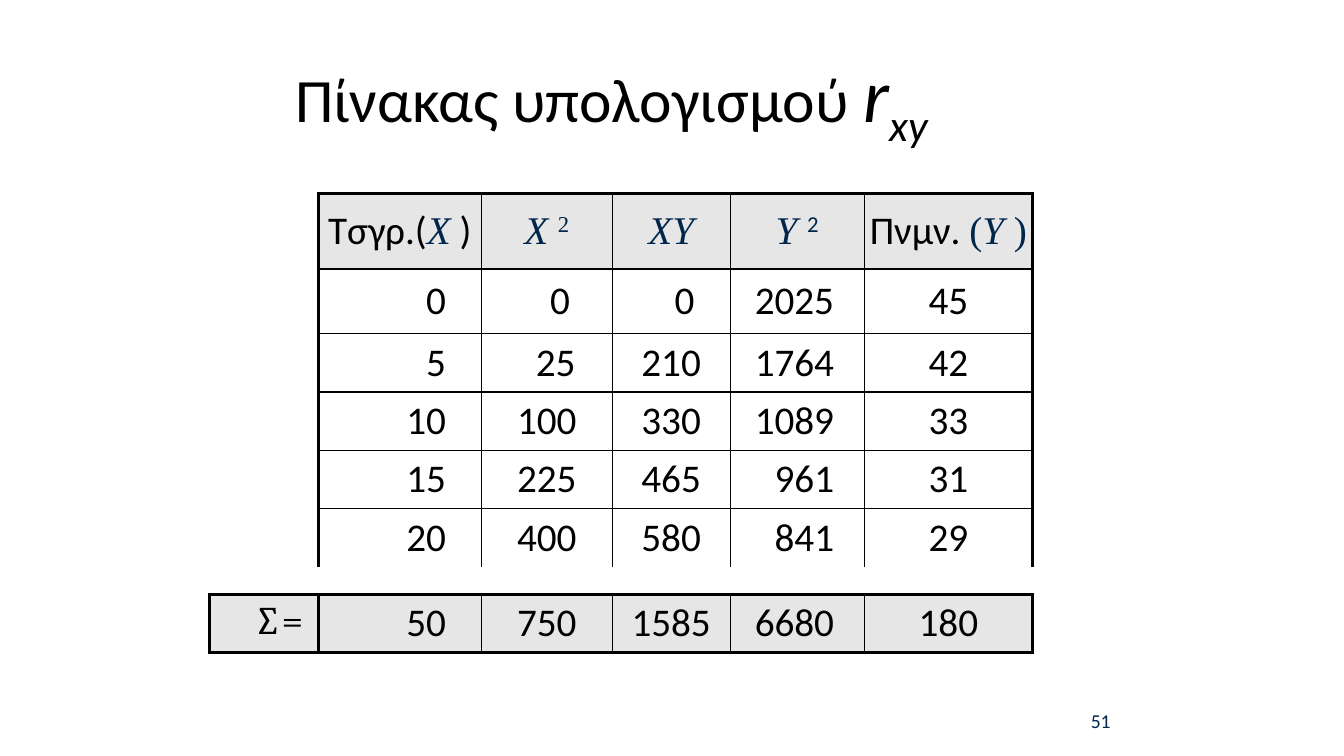
from lxml.etree import SubElement
from pptx import Presentation
from pptx.dml.color import RGBColor
from pptx.enum.text import MSO_ANCHOR as Anchor, MSO_AUTO_SIZE as AutoSize, PP_ALIGN as Align
from pptx.oxml.ns import qn
from pptx.util import Cm, Pt

BLACK, NAVY, GRAY = "000000", "00264C", "E6E6E6"
SERIF = "Times New Roman"
THIN, THICK = 1, 2.25
NO_STYLE = "{2D5ABB26-0587-4C30-8999-92F81FD0307C}"

COLUMN_WIDTHS = [2.74, 4.11, 3.3, 2.97, 3.38, 4.24]
ROW_HEIGHTS = [1.9, 1.63] + [1.47] * 4 + [0.69, 1.47]
SPACER, TOTAL = 6, 7

VARIABLE = {"font": SERIF, "color": NAVY, "italic": True}
SERIF_PLAIN = {"font": SERIF, "color": NAVY}
HEADERS = [
    [("Τσγρ.(", {}), ("X", VARIABLE), (" )", {})],
    [("X ", VARIABLE), ("2", {**SERIF_PLAIN, "baseline": 30})],
    [("XY", VARIABLE)],
    [("Y ", VARIABLE), ("2", {"color": NAVY, "baseline": 30})],
    [("Πνμν. ", {}), ("(", SERIF_PLAIN), ("Y ", VARIABLE), (")", SERIF_PLAIN)],
]
DATA = [
    [0, 0, 0, 2025, 45],
    [5, 25, 210, 1764, 42],
    [10, 100, 330, 1089, 33],
    [15, 225, 465, 961, 31],
    [20, 400, 580, 841, 29],
]
TOTALS = [50, 750, 1585, 6680, 180]
RIGHT_INSETS = {1: 0.89, 4: 0.76}  # right-aligned columns
# Extra left inset that shifts short numbers towards the units column
SHIFTS = {(1, 2): 0.67, (1, 3): 0.67, (2, 2): 0.45}


def rgb(color):
    return RGBColor.from_string(color)


def write_text(para, text, font="Calibri", size=28, color=BLACK, italic=False, baseline=0):
    span = para.add_run()
    span.text = text
    span.font.name = font
    span.font.size = Pt(size)
    span.font.color.rgb = rgb(color)
    span.font.italic = italic
    if baseline:
        span.font._element.set("baseline", str(baseline * 1000))


def place(shape, box):
    shape.left, shape.top, shape.width, shape.height = [Cm(length) for length in box]


def add_title(page, box):
    title = page.shapes.title
    place(title, box)
    frame = title.text_frame
    frame.auto_size = AutoSize.NONE
    frame.vertical_anchor = Anchor.MIDDLE
    para = frame.paragraphs[0]
    para.alignment = Align.LEFT
    para.line_spacing = 0.9
    write_text(para, "Πίνακας υπολογισμού ", size=44)
    write_text(para, "r", size=54, italic=True)
    write_text(para, "xy", size=54, italic=True, baseline=-25)


def add_page_number(page, box):
    frame = page.shapes.add_textbox(*[Cm(length) for length in box]).text_frame
    frame.word_wrap = True
    frame.vertical_anchor = Anchor.MIDDLE
    para = frame.paragraphs[0]
    para.alignment = Align.CENTER
    write_text(para, "51", size=14, color=NAVY)


def vertical_width(row, edge):
    if row == SPACER or (edge == 0 and row != TOTAL):
        return 0
    return THICK if edge in (0, 1, len(COLUMN_WIDTHS)) else THIN


def horizontal_width(edge, column):
    if edge in (TOTAL, TOTAL + 1):
        return THICK
    if column == 0 or edge == SPACER:
        return 0
    return THICK if edge in (0, 1) else THIN


def draw_borders(cell, row, column):
    properties = cell._tc.get_or_add_tcPr()
    widths = {
        "L": vertical_width(row, column),
        "R": vertical_width(row, column + 1),
        "T": horizontal_width(row, column),
        "B": horizontal_width(row + 1, column),
    }
    for side, width in widths.items():
        line = SubElement(properties, qn(f"a:ln{side}"), w=str(Pt(width)))
        if width:
            fill = SubElement(line, qn("a:solidFill"))
            SubElement(fill, qn("a:srgbClr"), val=BLACK)
        else:
            SubElement(line, qn("a:noFill"))


def set_insets(cell, left, top, right, bottom):
    cell.margin_left, cell.margin_top = Cm(left), Cm(top)
    cell.margin_right, cell.margin_bottom = Cm(right), Cm(bottom)


def fill_cell(cell, row, column):
    para = cell.text_frame.paragraphs[0]
    cell.vertical_anchor = Anchor.MIDDLE
    para.alignment = Align.CENTER
    if row == SPACER or (column == 0 and row != TOTAL):
        set_insets(cell, 0, 0, 0, 0)
        SubElement(para._p, qn("a:endParaRPr"), sz="800")
    elif row == 0:
        set_insets(cell, 0, 0, 0, 0)
        for text, style in HEADERS[column - 1]:
            write_text(para, text, **style)
    elif column == 0:
        set_insets(cell, 0.25, 0.13, 0.38, 0.13)
        cell.vertical_anchor = Anchor.TOP
        para.alignment = Align.RIGHT
        write_text(para, "∑=", font="Cambria")
    else:
        shift = SHIFTS.get((row, column), 0)
        set_insets(cell, 0.25 + shift, 0.13, RIGHT_INSETS.get(column, 0.25), 0.13)
        if column in RIGHT_INSETS:
            para.alignment = Align.RIGHT
        values = TOTALS if row == TOTAL else DATA[row - 1]
        write_text(para, str(values[column - 1]))


def add_calculation_table(page, left, top):
    shape = page.shapes.add_table(
        len(ROW_HEIGHTS), len(COLUMN_WIDTHS),
        Cm(left), Cm(top), Cm(sum(COLUMN_WIDTHS)), Cm(sum(ROW_HEIGHTS)))
    table = shape.table
    table.first_row = table.horz_banding = False
    for style in shape.element.iter(qn("a:tableStyleId")):
        style.text = NO_STYLE
    for column, width in zip(table.columns, COLUMN_WIDTHS):
        column.width = Cm(width)
    for row, height in zip(table.rows, ROW_HEIGHTS):
        row.height = Cm(height)

    # Borders come before the fill in the cell properties
    for row in range(len(ROW_HEIGHTS)):
        for column in range(len(COLUMN_WIDTHS)):
            cell = table.cell(row, column)
            draw_borders(cell, row, column)
            if row == TOTAL or (row == 0 and column > 0):
                cell.fill.solid()
                cell.fill.fore_color.rgb = rgb(GRAY)
            else:
                cell.fill.background()
            fill_cell(cell, row, column)
    table.cell(SPACER, 0).merge(table.cell(SPACER, len(COLUMN_WIDTHS) - 1))


def main():
    deck = Presentation()
    deck.slide_width, deck.slide_height = Cm(33.87), Cm(19.05)
    page = deck.slides.add_slide(deck.slide_layouts[5])
    add_title(page, (7.19, 0.79, 21.67, 3.18))
    add_page_number(page, (23.93, 17.65, 7.62, 1.02))
    add_calculation_table(page, 5.28, 4.88)
    deck.save("out.pptx")


if __name__ == "__main__":
    main()
